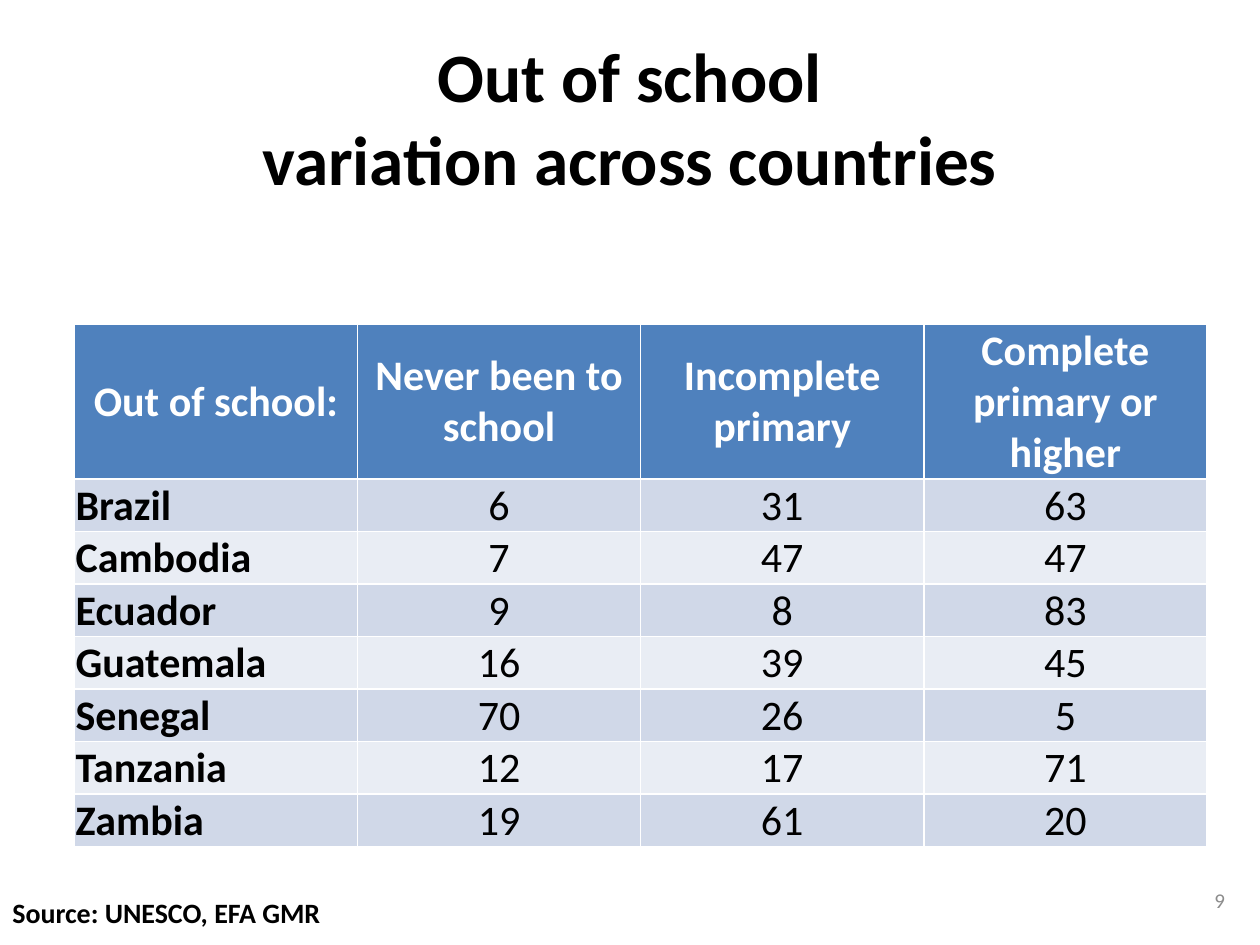
from dataclasses import dataclass

from lxml import etree
from pptx import Presentation
from pptx import util as u
from pptx.dml.color import RGBColor
from pptx.enum import text
from pptx.oxml import ns


@dataclass(frozen=True)
class Theme:
    font: str = "Calibri"
    ink: str = "000000"
    white: str = "FFFFFF"
    grey: str = "8C8C8C"
    head: str = "4F81BD"
    bands: tuple = ("D0D8E8", "E9EDF4")
    title: float = 39.6
    body: float = 24
    source: float = 16
    number: float = 12


THEME = Theme()
ALIGN = text.PP_ALIGN
ANCHOR = text.MSO_ANCHOR
HEADS = ("Out of school:", "Never been to school",
         "Incomplete primary", "Complete primary or higher")
ROWS = (
    ("Brazil", 6, 31, 63),
    ("Cambodia", 7, 47, 47),
    ("Ecuador", 9, 8, 83),
    ("Guatemala", 16, 39, 45),
    ("Senegal", 70, 26, 5),
    ("Tanzania", 12, 17, 71),
    ("Zambia", 19, 61, 20),
)


def style(para, size, color, bold, align):
    para.alignment = align
    para.font.name = THEME.font
    para.font.size = u.Pt(size)
    para.font.bold = bold
    para.font.color.rgb = RGBColor.from_string(color)


def add_text(slide, box, words, size, color, bold=True,
             align=ALIGN.LEFT, anchor=ANCHOR.MIDDLE):
    frame = slide.shapes.add_textbox(*map(u.Inches, box)).text_frame
    frame.word_wrap = True
    frame.vertical_anchor = anchor
    frame.text = words
    style(frame.paragraphs[0], size, color, bold, align)


def add_edges(cell):
    props = cell._tc.get_or_add_tcPr()
    for index, side in enumerate(("lnL", "lnR", "lnT", "lnB")):
        line = etree.Element(ns.qn(f"a:{side}"), w=str(u.Pt(1)))
        fill = etree.SubElement(line, ns.qn("a:solidFill"))
        etree.SubElement(fill, ns.qn("a:srgbClr"), val=THEME.white)
        props.insert(index, line)


def fill_cell(cell, words, fill, color, bold, align):
    cell.margin_left = cell.margin_right = cell.margin_top = u.Inches(0.01)
    cell.margin_bottom = 0
    cell.vertical_anchor = ANCHOR.MIDDLE
    cell.fill.solid()
    cell.fill.fore_color.rgb = RGBColor.from_string(fill)
    cell.text = str(words)
    style(cell.text_frame.paragraphs[0], THEME.body, color, bold, align)
    add_edges(cell)


def add_grid(slide, box, row_height):
    left, top, width, height = map(u.Inches, box)
    table = slide.shapes.add_table(
        len(ROWS) + 1, len(HEADS), left, top, width, height).table
    for row in table.rows:
        row.height = u.Inches(row_height)
    table.rows[0].height = height - len(ROWS) * u.Inches(row_height)
    for col, words in enumerate(HEADS):
        fill_cell(table.cell(0, col), words, THEME.head, THEME.white,
                  True, ALIGN.CENTER)
    for row, values in enumerate(ROWS, 1):
        band = THEME.bands[(row - 1) % 2]
        for col, value in enumerate(values):
            align = ALIGN.CENTER if col else ALIGN.LEFT
            fill_cell(table.cell(row, col), value, band, THEME.ink,
                      col == 0, align)


def add_foot(slide, box):
    left, top, width, height = box
    add_text(slide, (9.45, top - 0.05, 0.37, 0.27), "9", THEME.number,
             THEME.grey, False, ALIGN.RIGHT)
    add_text(slide, (left, top, width, height), "Source: UNESCO, EFA GMR",
             THEME.source, THEME.ink, anchor=ANCHOR.TOP)


def main():
    deck = Presentation()
    deck.slide_width, deck.slide_height = u.Inches(10), u.Inches(7.5)
    slide = deck.slides.add_slide(deck.slide_layouts[6])
    add_grid(slide, (0.59, 2.57, 8.99, 4.08), 0.41)
    add_text(slide, (0.5, 0.3, 9, 1.25),
             "Out of school\vvariation across countries",
             THEME.title, THEME.ink, align=ALIGN.CENTER)
    add_foot(slide, (0, 7.06, 10.38, 0.36))
    deck.save("out.pptx")


if __name__ == "__main__":
    main()
